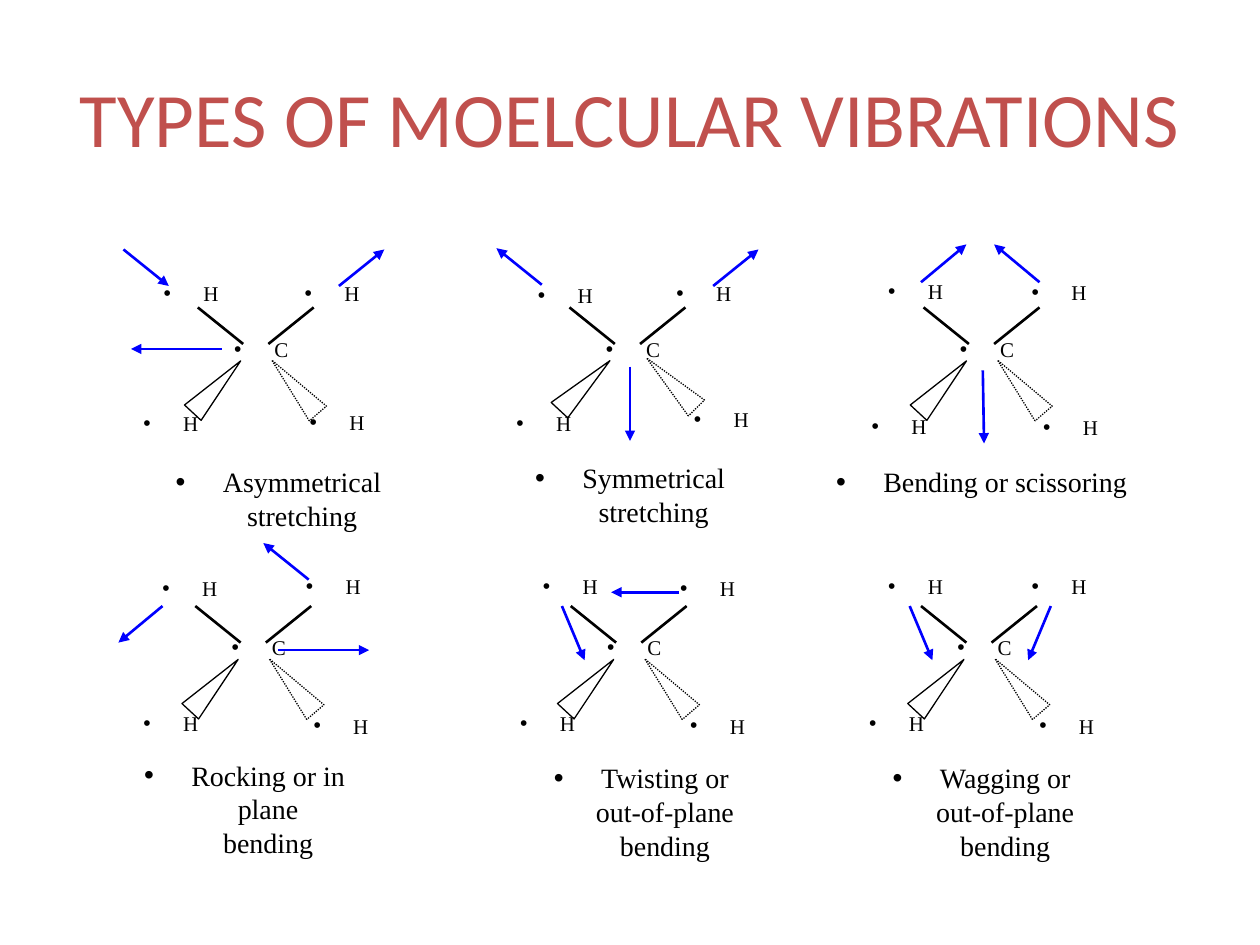
"""Build a slide of six molecular vibration diagrams."""
from lxml import etree
from pptx import Presentation
from pptx.dml.color import RGBColor
from pptx.enum.dml import MSO_LINE
from pptx.enum.shapes import MSO_CONNECTOR, MSO_SHAPE
from pptx.enum.text import MSO_ANCHOR, PP_ALIGN
from pptx.oxml.ns import qn
from pptx.util import Inches, Pt

LINE = MSO_CONNECTOR.STRAIGHT
WEDGE = MSO_SHAPE.ISOSCELES_TRIANGLE
DOTS = MSO_LINE.ROUND_DOT
CENTER = PP_ALIGN.CENTER
MIDDLE = MSO_ANCHOR.MIDDLE
INK = {"title": "C0504D", "text": "000000", "bond": "000000", "arrow": "0000FF"}

prs = Presentation()
prs.slide_width, prs.slide_height = Inches(10), Inches(7.5)
slide = prs.slides.add_slide(prs.slide_layouts[5])
shapes = slide.shapes


def add_label(text, left, top, width, height, size):
    box = shapes.add_textbox(Inches(left), Inches(top), Inches(width), Inches(height))
    box.text_frame.word_wrap = True
    para = box.text_frame.paragraphs[0]
    para.text = text
    para.alignment = CENTER
    font = para.runs[0].font
    font.name, font.size = "Times New Roman", Pt(size)
    font.color.rgb = RGBColor.from_string(INK["text"])
    props = para._p.get_or_add_pPr()
    props.set("marL", str(Inches(0.375)))
    props.set("indent", str(-Inches(0.375)))
    etree.SubElement(props, qn("a:buFont"), typeface="Arial")
    etree.SubElement(props, qn("a:buChar"), char="•")


def add_line(x1, y1, x2, y2, kind):
    line = shapes.add_connector(LINE, Inches(x1), Inches(y1), Inches(x2), Inches(y2))
    line.line.color.rgb = RGBColor.from_string(INK[kind])
    line.line.width = Pt(1.5)
    if kind == "arrow":
        etree.SubElement(line.line._get_or_add_ln(), qn("a:tailEnd"), type="triangle")
    etree.SubElement(line._element.spPr, qn("a:effectLst"))


title = shapes.title
title.left, title.top = Inches(0.5), Inches(0.3)
title.width, title.height = Inches(9), Inches(1.25)
title.text_frame.text = "TYPES OF MOELCULAR VIBRATIONS"
title.text_frame.vertical_anchor = MIDDLE
para = title.text_frame.paragraphs[0]
para.alignment = CENTER
font = para.runs[0].font
font.name, font.size = "Calibri", Pt(44)
font.color.rgb = RGBColor.from_string(INK["title"])

BONDS = [(-0.19, -0.18, 0.17, 0.11), (0.37, 0.11, 0.73, -0.18)]
SOLID, FADED = (-0.13, 0.17, 42.8, 0.5), (0.49, 0.17, 319.2, 0.5)
modes = [
    {"name": "Asymmetrical stretching", "label": (1.04, 3.64, 2.34, 0.44),
     "carbon": (1.76, 2.62),
     "atoms": [(1.2, 2.18), (2.32, 2.18), (1.04, 3.21), (2.36, 3.2)],
     "arrows": [(0.98, 1.98, 1.34, 2.27), (2.69, 2.27, 3.05, 1.98),
                (1.76, 2.77, 1.04, 2.77)]},
    {"name": "Symmetrical stretching", "label": (3.74, 3.61, 2.52, 0.44),
     "carbon": (4.71, 2.62),
     "atoms": [(4.17, 2.19), (5.27, 2.18), (4, 3.21), (5.41, 3.18)],
     "wedges": [(-0.17, 0.15, 42.8, 0.65), (0.53, 0.14, 315.1, 0.5)],
     "arrows": [(4.3, 2.26, 3.94, 1.97), (5.66, 2.27, 6.02, 1.98),
                (5, 2.91, 5, 3.5)]},
    {"name": "Bending or scissoring", "label": (6.44, 3.64, 2.7, 0.31),
     "carbon": (7.52, 2.62),
     "atoms": [(6.95, 2.16), (8.09, 2.17), (6.82, 3.23), (8.18, 3.24)],
     "arrows": [(7.31, 2.24, 7.67, 1.94), (8.25, 2.24, 7.89, 1.94),
                (7.8, 2.94, 7.81, 3.52)]},
    {"name": "Rocking or in plane bending", "label": (1.04, 5.97, 1.8, 0.58),
     "carbon": (1.74, 4.99),
     "atoms": [(1.19, 4.52), (2.33, 4.5), (1.04, 5.59), (2.39, 5.61)],
     "arrows": [(1.29, 4.81, 0.94, 5.1), (2.45, 4.6, 2.09, 4.31),
                (2.21, 5.16, 2.93, 5.16)]},
    {"name": "Twisting or out-of-plane bending", "label": (4.1, 5.99, 1.98, 0.58),
     "carbon": (4.72, 4.99),
     "atoms": [(4.21, 4.5), (5.3, 4.52), (4.03, 5.59), (5.38, 5.61)],
     "arrows": [(4.46, 4.81, 4.64, 5.24), (5.39, 4.7, 4.85, 4.7)]},
    {"name": "Wagging or out-of-plane bending", "label": (6.8, 5.99, 1.98, 0.58),
     "carbon": (7.5, 4.99),
     "atoms": [(6.95, 4.5), (8.09, 4.5), (6.8, 5.59), (8.15, 5.61)],
     "arrows": [(7.22, 4.81, 7.4, 5.24), (8.34, 4.81, 8.16, 5.24)]},
]

for mode in modes:
    x, y = mode["carbon"]
    add_label("C", x, y, 0.54, 0.44, 12)
    for left, top in mode["atoms"]:
        add_label("H", left, top, 0.54, 0.39, 12)
    for x1, y1, x2, y2 in BONDS:
        add_line(x + x1, y + y1, x + x2, y + y2, "bond")
    for dx, dy, turn, peak in mode.get("wedges", [SOLID, FADED]):
        wedge = shapes.add_shape(WEDGE, Inches(x + dx), Inches(y + dy),
                                 Inches(0.18), Inches(0.56))
        wedge.rotation = turn
        wedge.adjustments[0] = peak
        wedge.shadow.inherit = False
        wedge.fill.background()
        wedge.line.color.rgb = RGBColor.from_string(INK["bond"])
        wedge.line.width = Pt(0.75)
        if turn > 180:
            wedge.line.dash_style = DOTS
    for arrow in mode["arrows"]:
        add_line(*arrow, "arrow")
    add_label(mode["name"], *mode["label"], 16)

prs.save("out.pptx")
